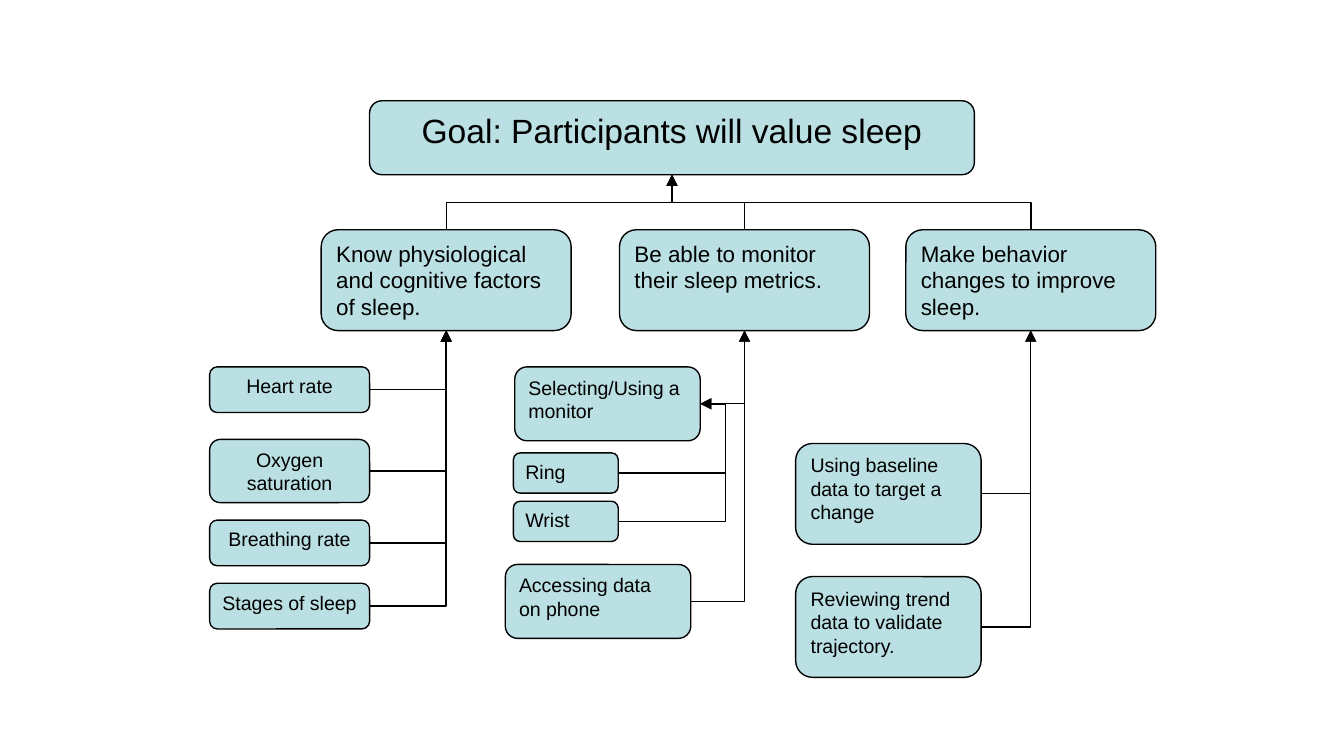
from lxml import etree
from pptx import Presentation
from pptx.dml.color import RGBColor
from pptx.enum.shapes import MSO_CONNECTOR as Connector, MSO_SHAPE as Shape
from pptx.enum.text import MSO_ANCHOR as Anchor, PP_ALIGN as Align
from pptx.oxml.ns import qn
from pptx.util import Inches, Pt

COLORS = {"box": "BBE0E3", "ink": "000000"}
FONT = "Arial"
TOP, BOTTOM, RIGHT = 0, 2, 3  # connection sites
OBJECTIVE_SIZE = (1.86, 0.75)


def rgb(name):
    return RGBColor.from_string(COLORS[name])


def add_box(slide, text, left, top, width, height, size=10.5, align=Align.LEFT):
    box = slide.shapes.add_shape(
        Shape.ROUNDED_RECTANGLE,
        Inches(left), Inches(top), Inches(width), Inches(height))
    box.shadow.inherit = False
    box.fill.solid()
    box.fill.fore_color.rgb = rgb("box")
    box.line.color.rgb = rgb("ink")
    box.line.width = Pt(0.75)

    frame = box.text_frame
    frame.word_wrap = True
    frame.vertical_anchor = Anchor.TOP
    frame.margin_left = frame.margin_right = Pt(5.4)
    frame.margin_top = frame.margin_bottom = Pt(2.7)
    frame.text = text
    paragraph = frame.paragraphs[0]
    paragraph.alignment = align
    font = paragraph.runs[0].font
    font.name, font.size, font.color.rgb = FONT, Pt(size), rgb("ink")
    return box


def add_arrow(slide, start, start_site, end, end_site):
    """Elbow arrow glued to the sides of two boxes."""
    arrow = slide.shapes.add_connector(Connector.ELBOW, 0, 0, 0, 0)
    arrow.begin_connect(start, start_site)
    arrow.end_connect(end, end_site)
    arrow.line.color.rgb = rgb("ink")
    arrow.line.width = Pt(0.75)
    etree.SubElement(arrow.line._get_or_add_ln(), qn("a:tailEnd"), type="triangle")
    etree.SubElement(arrow._element.spPr, qn("a:effectLst"))
    return arrow


def join_corner(slide, child, parent):
    """One bend: right from the child, then up to the parent."""
    arrow = add_arrow(slide, child, RIGHT, parent, BOTTOM)
    arrow._element.spPr.find(qn("a:prstGeom")).set("prst", "bentConnector2")


def join_riser(slide, child, parent):
    """Two bends: up, across and up; the elbow is turned a quarter."""
    arrow = add_arrow(slide, child, TOP, parent, BOTTOM)
    x1, y1, x2, y2 = arrow.begin_x, arrow.begin_y, arrow.end_x, arrow.end_y
    rise, run = y1 - y2, abs(x1 - x2)
    arrow.left, arrow.top = (x1 + x2 - rise) // 2, (y1 + y2 - run) // 2
    arrow.width, arrow.height = rise, run
    xfrm = arrow._element.spPr.find(qn("a:xfrm"))
    xfrm.set("rot", str(270 * 60000))
    xfrm.set("flipH", "0")
    xfrm.set("flipV", "1" if x1 > x2 else "0")


def join_return(slide, child, parent):
    """Two bends: out past the parent, up and back to its right side."""
    arrow = add_arrow(slide, child, RIGHT, parent, RIGHT)
    geometry = arrow._element.spPr.find(qn("a:prstGeom"))
    adjustments = geometry.find(qn("a:avLst"))
    if adjustments is None:
        adjustments = etree.SubElement(geometry, qn("a:avLst"))
    etree.SubElement(adjustments, qn("a:gd"), name="adj1", fmla="val 130600")


def add_branch(slide, goal, left, top, objective_text, steps, step_align=Align.LEFT):
    """An objective under the goal; steps are (text, dx, dy, width, height)."""
    objective = add_box(slide, objective_text, left, top, *OBJECTIVE_SIZE, size=12)
    join_riser(slide, objective, goal)
    step_boxes = []
    for text, dx, dy, width, height in steps:
        step = add_box(slide, text, left + dx, top + dy, width, height,
                       align=step_align)
        join_corner(slide, step, objective)
        step_boxes.append(step)
    return step_boxes


def add_monitor_types(slide, monitor, left, top):
    for row, text in enumerate(("Ring", "Wrist")):
        kind = add_box(slide, text, left, top + row * 0.36, 0.78, 0.3)
        join_return(slide, kind, monitor)


def main():
    deck = Presentation()
    deck.slide_width = Inches(10)
    deck.slide_height = deck.slide_width * 9 // 16
    slide = deck.slides.add_slide(deck.slide_layouts[6])

    # Goal
    goal = add_box(slide, "Goal: Participants will value sleep",
                   2.75, 0.75, 4.5, 0.55, size=18, align=Align.CENTER)

    # Knowledge
    add_branch(
        slide, goal, 2.39, 1.71,
        "Know physiological and cognitive factors of sleep.",
        [("Heart rate", -0.83, 1.02, 1.19, 0.34),
         ("Oxygen saturation", -0.83, 1.56, 1.19, 0.47),
         ("Breathing rate", -0.83, 2.16, 1.19, 0.34),
         ("Stages of sleep", -0.83, 2.63, 1.19, 0.34)],
        step_align=Align.CENTER)

    # Monitoring
    monitor, _ = add_branch(
        slide, goal, 4.61, 1.71,
        "Be able to monitor their sleep metrics.",
        [("Selecting/Using a monitor", -0.78, 1.02, 1.38, 0.55),
         ("Accessing data on phone", -0.85, 2.49, 1.38, 0.55)])
    add_monitor_types(slide, monitor, 3.82, 3.37)

    # Behavior
    add_branch(
        slide, goal, 6.74, 1.71,
        "Make behavior changes to improve sleep.",
        [("Using baseline data to target a change", -0.82, 1.59, 1.38, 0.75),
         ("Reviewing trend data to validate trajectory.", -0.82, 2.58, 1.38, 0.75)])

    deck.save("out.pptx")


if __name__ == "__main__":
    main()
